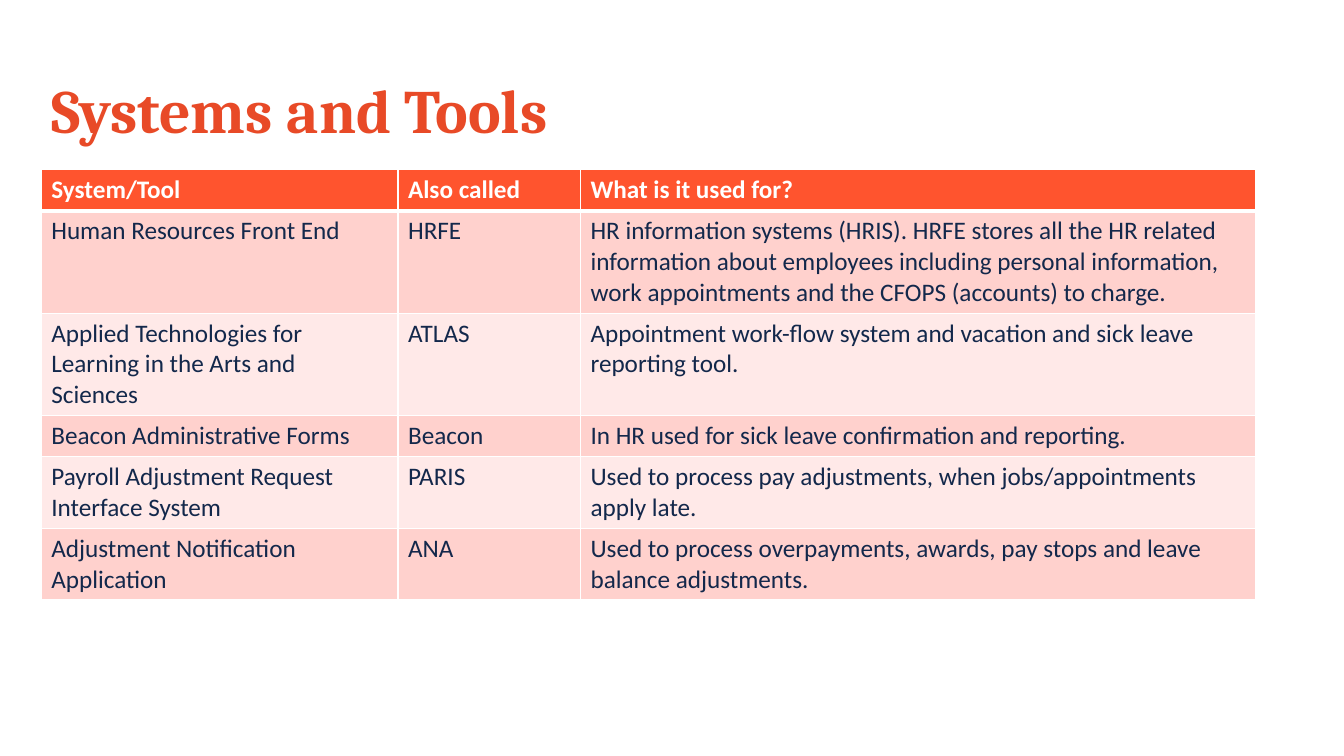
from dataclasses import dataclass

from lxml.etree import SubElement
from pptx import Presentation
from pptx.dml.color import RGBColor
from pptx.enum.text import MSO_ANCHOR as Anchor, PP_ALIGN as Align
from pptx.oxml.ns import qn
from pptx.util import Cm, Pt


@dataclass(frozen=True)
class Theme:
    title_font: str = "Cambria"
    body_font: str = "Calibri"
    title_size: int = 44
    body_size: int = 18
    title_color: str = "E84A27"
    header_fill: str = "FF542E"
    band_fills: tuple = ("FFD1CD", "FFE9E8")
    text_color: str = "13284B"
    white: str = "FFFFFF"
    thin_line: int = 1
    thick_line: int = 3


THEME = Theme()
COLUMN_WIDTHS = (8.99, 4.6, 17.01)
ROW_HEIGHT = 1.04
ROWS = (
    ("System/Tool", "Also called", "What is it used for?"),
    ("Human Resources Front End", "HRFE",
     "HR information systems (HRIS). HRFE stores all the HR related information about "
     "employees including personal information, work appointments and the CFOPS "
     "(accounts) to charge."),
    ("Applied Technologies for Learning in the Arts and Sciences", "ATLAS",
     "Appointment work-flow system and vacation and sick leave reporting tool."),
    ("Beacon Administrative Forms", "Beacon",
     "In HR used for sick leave confirmation and reporting."),
    ("Payroll Adjustment Request Interface System", "PARIS",
     "Used to process pay adjustments, when jobs/appointments apply late."),
    ("Adjustment Notification Application", "ANA",
     "Used to process overpayments, awards, pay stops and leave balance adjustments."),
)


def set_font(paragraph, name, size, color, bold):
    font = paragraph.font
    font.name = name
    font.size = Pt(size)
    font.bold = bold
    font.color.rgb = RGBColor.from_string(color)


def add_title(slide, text):
    title = slide.shapes.title
    title.left, title.top, title.width, title.height = Cm(1.04), Cm(1.02), Cm(26.7), Cm(3.68)
    frame = title.text_frame
    frame.text = text
    frame.vertical_anchor = Anchor.MIDDLE
    paragraph = frame.paragraphs[0]
    paragraph.alignment = Align.LEFT
    paragraph.line_spacing = 0.9
    set_font(paragraph, THEME.title_font, THEME.title_size, THEME.title_color, True)


def set_borders(cell, top, bottom):
    properties = cell._tc.get_or_add_tcPr()
    widths = {"L": THEME.thin_line, "R": THEME.thin_line, "T": top, "B": bottom}
    for side, width in widths.items():
        line = SubElement(properties, qn(f"a:ln{side}"), w=str(Pt(width)))
        fill = SubElement(line, qn("a:solidFill"))
        SubElement(fill, qn("a:srgbClr"), val=THEME.white)


def format_cell(cell, text, row_index):
    is_header = row_index == 0
    cell.text = text
    color = THEME.white if is_header else THEME.text_color
    set_font(cell.text_frame.paragraphs[0], THEME.body_font, THEME.body_size, color, is_header)
    set_borders(
        cell,
        top=THEME.thick_line if row_index == 1 else THEME.thin_line,
        bottom=THEME.thick_line if is_header else THEME.thin_line,
    )
    fill = THEME.header_fill if is_header else THEME.band_fills[(row_index - 1) % 2]
    cell.fill.solid()
    cell.fill.fore_color.rgb = RGBColor.from_string(fill)


def add_systems_table(slide, rows):
    table = slide.shapes.add_table(
        len(rows), len(COLUMN_WIDTHS), Cm(1.04), Cm(4.27),
        Cm(sum(COLUMN_WIDTHS)), Cm(ROW_HEIGHT * len(rows)),
    ).table
    for column, width in zip(table.columns, COLUMN_WIDTHS):
        column.width = Cm(width)
    for row_index, texts in enumerate(rows):
        table.rows[row_index].height = Cm(ROW_HEIGHT)
        for column_index, text in enumerate(texts):
            format_cell(table.cell(row_index, column_index), text, row_index)


def main():
    presentation = Presentation()
    presentation.slide_width = Cm(33.87)
    presentation.slide_height = Cm(19.05)
    slide = presentation.slides.add_slide(presentation.slide_layouts.get_by_name("Title Only"))
    add_title(slide, "Systems and Tools")
    add_systems_table(slide, ROWS)
    presentation.save("out.pptx")


if __name__ == "__main__":
    main()
